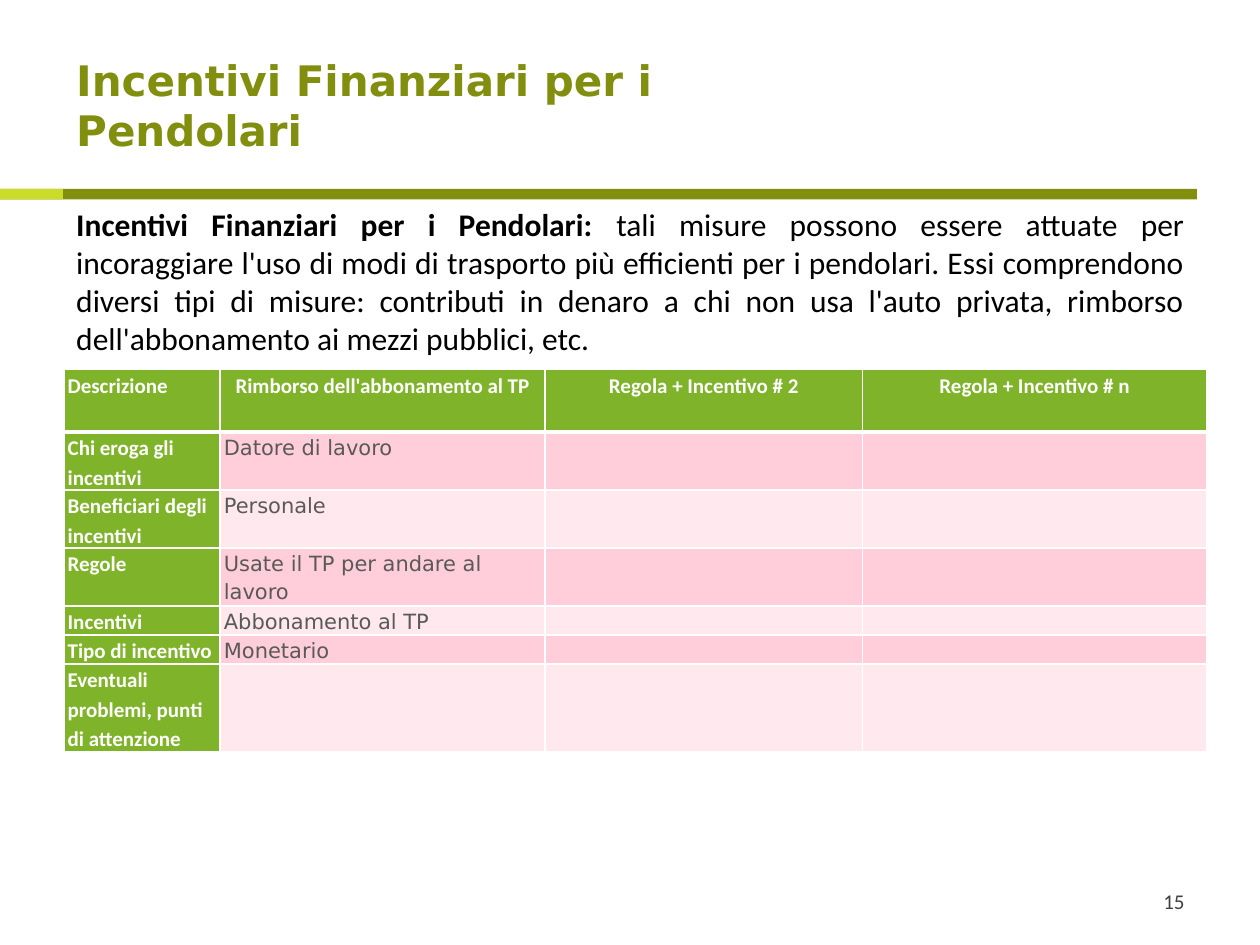
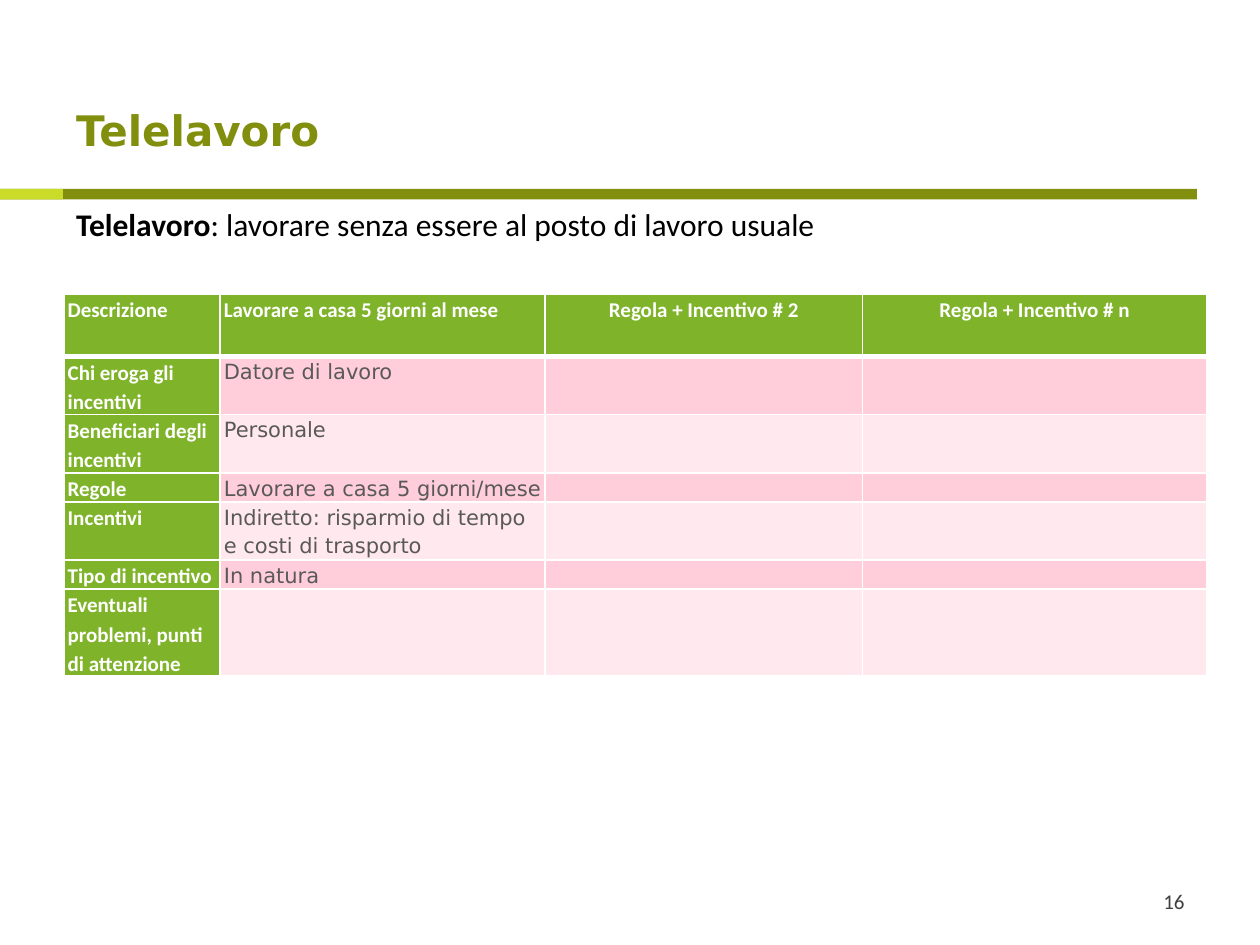
from lxml import etree
from pptx import Presentation
from pptx.dml import color
from pptx.enum import shapes, text
from pptx.oxml import ns
from pptx.util import Pt

COLORS = {
    "olive": "828E0E", "lime": "CADB2A", "green": "7FB32A",
    "rose": "FFCEDA", "blush": "FFE8EE", "white": "FFFFFF",
    "black": "000000", "dark": "404040", "grey": "595959",
}
FORMATS = {
    "title": {"name": "DejaVu Sans", "size": Pt(24), "bold": True, "color": "olive"},
    "lead": {"name": "Calibri", "size": Pt(18), "bold": True, "color": "black"},
    "body": {"name": "Calibri", "size": Pt(18), "bold": False, "color": "black"},
    "number": {"name": "Calibri", "size": Pt(12), "bold": False, "color": "dark"},
    "heading": {"name": "Calibri", "size": Pt(12), "bold": True, "color": "white"},
    "entry": {"name": "DejaVu Sans", "size": Pt(12), "bold": False, "color": "grey"},
}
LEFT = 36.5
LINE_HEIGHT = 16.6
HEADER_HEIGHT = 35.8
COLUMN_WIDTHS = [89.28, 185.76, 181.4, 196.7]
ROW_LABELS = [
    "Chi eroga gli incentivi", "Beneficiari degli incentivi", "Regole",
    "Incentivi", "Tipo di incentivo", "Eventuali problemi, punti di attenzione",
]
OTHER_RULES = ["Regola + Incentivo # 2", "Regola + Incentivo # n"]
ALIGN = text.PP_ALIGN
ANCHOR = text.MSO_ANCHOR


def rgb(name):
    return color.RGBColor.from_string(COLORS[name])


class Deck:
    def __init__(self):
        self.presentation = Presentation()
        self.presentation.slide_width = Pt(720)
        self.presentation.slide_height = Pt(540)
        self.slide = None

    def add_slide(self, title, number):
        self.slide = self.presentation.slides.add_slide(self.presentation.slide_layouts[6])
        self.band(684, "olive")
        self.band(36, "lime")
        self.text_box((516, 500.5, 168, 28.8), [(str(number), "number")], ALIGN.RIGHT, ANCHOR.MIDDLE)
        self.text_box((LEFT, 41.8, 463, 50.4), [(title, "title")], ALIGN.LEFT, ANCHOR.BOTTOM)

    def band(self, width, fill):
        shape = self.slide.shapes.add_shape(
            shapes.MSO_SHAPE.RECTANGLE, 0, Pt(108), Pt(width), Pt(6))
        shape.shadow.inherit = False
        shape.fill.solid()
        shape.fill.fore_color.rgb = rgb(fill)
        shape.line.fill.background()

    def add_runs(self, paragraph, runs, alignment):
        paragraph.alignment = alignment
        for words, style in runs:
            run = paragraph.add_run()
            run.text = words
            for key, value in FORMATS[style].items():
                if key == "color":
                    run.font.color.rgb = rgb(value)
                else:
                    setattr(run.font, key, value)

    def text_box(self, bounds, runs, alignment, anchor=ANCHOR.TOP):
        frame = self.slide.shapes.add_textbox(*map(Pt, bounds)).text_frame
        frame.word_wrap = True
        frame.vertical_anchor = anchor
        self.add_runs(frame.paragraphs[0], runs, alignment)

    def borders(self, cell, top, bottom):
        properties = cell._tc.get_or_add_tcPr()
        for side, width in {"L": 1, "R": 1, "T": top, "B": bottom}.items():
            line = etree.SubElement(properties, ns.qn(f"a:ln{side}"), w=str(Pt(width)))
            fill = etree.SubElement(line, ns.qn("a:solidFill"))
            etree.SubElement(fill, ns.qn("a:srgbClr"), val=COLORS["white"])

    def cell(self, cell, words, style, fill, alignment, top=1, bottom=1):
        self.borders(cell, top, bottom)
        cell.fill.solid()
        cell.fill.fore_color.rgb = rgb(fill)
        margins = {"margin_left": 2.16, "margin_right": 2.16, "margin_top": 0, "margin_bottom": 0}
        for key, value in margins.items():
            setattr(cell, key, Pt(value))
        paragraph = cell.text_frame.paragraphs[0]
        paragraph.line_spacing = 1.15
        if words:
            self.add_runs(paragraph, [(words, style)], alignment)
        else:
            paragraph._p.get_or_add_endParaRPr().set("sz", "1200")

    def measure_table(self, top, rule, rule_alignment, entries, line_counts):
        heights = [HEADER_HEIGHT] + [count * LINE_HEIGHT for count in line_counts]
        table = self.slide.shapes.add_table(
            len(heights), len(COLUMN_WIDTHS), Pt(LEFT), Pt(top),
            Pt(sum(COLUMN_WIDTHS)), Pt(sum(heights))).table
        table.horz_banding = False
        for column, width in zip(table.columns, COLUMN_WIDTHS):
            column.width = Pt(width)
        for row, height in zip(table.rows, heights):
            row.height = Pt(height)
        headings = ["Descrizione", rule, *OTHER_RULES]
        alignments = [ALIGN.LEFT, rule_alignment, ALIGN.CENTER, ALIGN.CENTER]
        for column, (words, alignment) in enumerate(zip(headings, alignments)):
            self.cell(table.cell(0, column), words, "heading", "green", alignment, bottom=3)
        for row, (label, entry) in enumerate(zip(ROW_LABELS, entries), 1):
            top_border = 3 if row == 1 else 1
            self.cell(table.cell(row, 0), label, "heading", "green", ALIGN.LEFT, top_border)
            fill = "rose" if row % 2 else "blush"
            for column, words in enumerate([entry, "", ""], 1):
                self.cell(table.cell(row, column), words, "entry", fill, ALIGN.LEFT, top_border)


def main():
    deck = Deck()
    deck.add_slide("Incentivi Finanziari per i Pendolari", 15)
    deck.text_box((LEFT, 113.8, 647.5, 94.3), [
        ("Incentivi Finanziari per i Pendolari: ", "lead"),
        ("tali misure possono essere attuate per incoraggiare l'uso di modi di trasporto più "
         "efficienti per i pendolari. Essi comprendono diversi tipi di misure: contributi in "
         "denaro a chi non usa l'auto privata, rimborso dell'abbonamento ai mezzi pubblici, etc.",
         "body"),
    ], ALIGN.JUSTIFY)
    deck.measure_table(
        211, "Rimborso dell'abbonamento al TP", ALIGN.CENTER,
        ["Datore di lavoro", "Personale", "Usate il TP per andare al lavoro",
         "Abbonamento al TP", "Monetario", ""],
        [2, 2, 2, 1, 1, 3])

    deck.add_slide("Telelavoro", 16)
    deck.text_box((LEFT, 113.8, 647.5, 28.8), [
        ("Telelavoro", "lead"),
        (": lavorare senza essere al posto di lavoro usuale", "body"),
    ], ALIGN.JUSTIFY)
    deck.measure_table(
        168, "Lavorare a casa 5 giorni al mese", ALIGN.LEFT,
        ["Datore di lavoro", "Personale", "Lavorare a casa 5 giorni/mese",
         "Indiretto: risparmio di tempo e costi di trasporto", "In natura", ""],
        [2, 2, 1, 2, 1, 3])
    deck.presentation.save("out.pptx")


if __name__ == "__main__":
    main()
